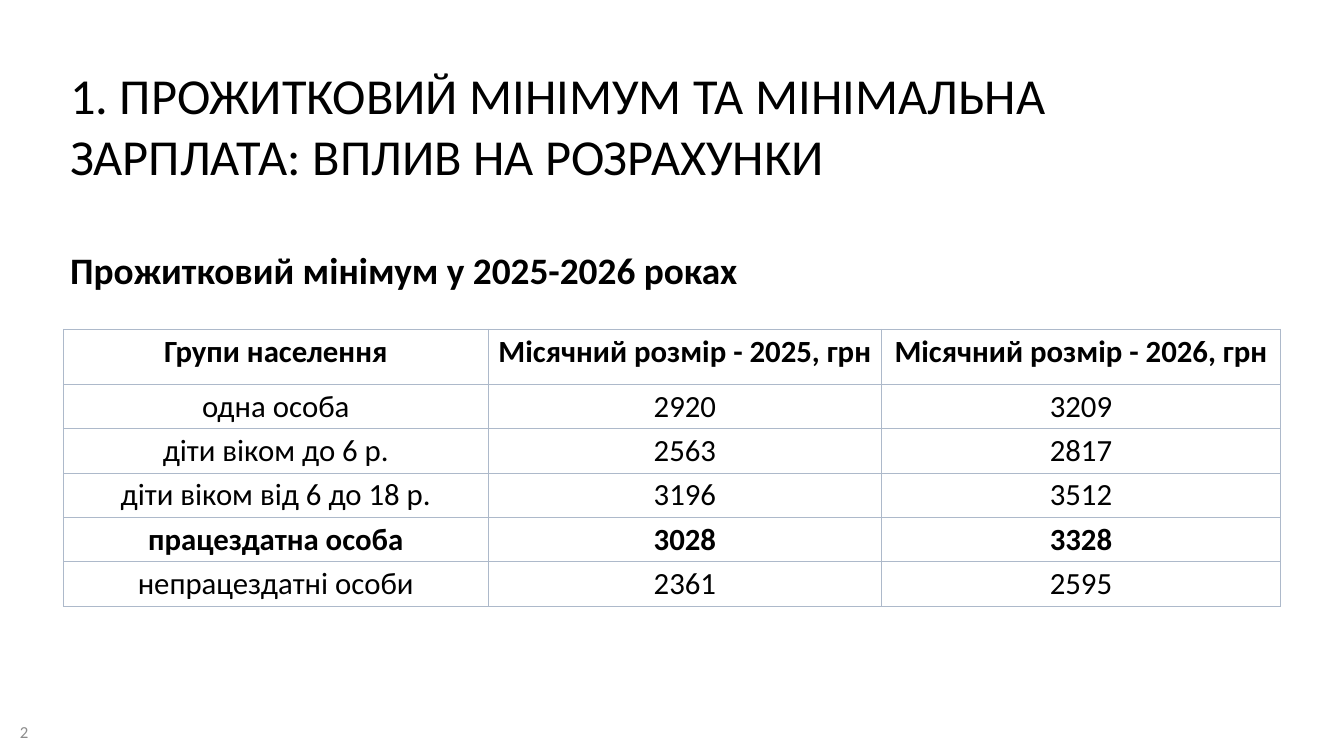
"""Builds a slide with a table of the subsistence minimum for 2025 and 2026."""
from lxml.etree import SubElement
from pptx import Presentation
from pptx.dml.color import RGBColor
from pptx.enum.text import MSO_ANCHOR, MSO_AUTO_SIZE, PP_ALIGN
from pptx.oxml.ns import qn
from pptx.util import Cm, Pt

COLOURS = {"text": "000000", "number": "8C8C8C", "cell": "FFFFFF", "border": "ADB9CA"}
COLUMN_WIDTHS = [16.05, 14.88, 15.06]
HEADER_HEIGHT, ROW_HEIGHT = 2.08, 1.65
BOLD_ROWS = {0, 4}
ROWS = [
    ["Групи населення", "Місячний розмір - 2025, грн", "Місячний розмір - 2026, грн"],
    ["одна особа", "2920", "3209"],
    ["діти віком до 6 р.", "2563", "2817"],
    ["діти віком від 6 до 18 р.", "3196", "3512"],
    ["працездатна особа", "3028", "3328"],
    ["непрацездатні особи", "2361", "2595"],
]


class SlideBuilder:
    def __init__(self, page, font_name="Calibri"):
        self.page = page
        self.font_name = font_name

    def add_text(self, frame, text, size, colour="text", bold=False, align=PP_ALIGN.LEFT):
        para = frame.paragraphs[0]
        for name, value in {"alignment": align, "space_before": Pt(0)}.items():
            setattr(para, name, value)
        span = para.add_run()
        span.text = text
        formats = {"name": self.font_name, "size": Pt(size), "bold": bold}
        for name, value in formats.items():
            setattr(span.font, name, value)
        span.font.color.rgb = RGBColor.from_string(COLOURS[colour])

    def place(self, box, left, top, width, height, anchor=MSO_ANCHOR.TOP):
        position = {"left": left, "top": top, "width": width, "height": height}
        for name, value in position.items():
            setattr(box, name, Cm(value))
        formats = {
            "word_wrap": True,
            "auto_size": MSO_AUTO_SIZE.NONE,
            "vertical_anchor": anchor,
        }
        for name, value in formats.items():
            setattr(box.text_frame, name, value)

    def title(self, text, *position):
        box = self.page.shapes.title
        self.place(box, *position)
        self.add_text(box.text_frame, text, 54)

    def body(self, text, *position):
        box = self.page.placeholders[1]
        self.place(box, *position)
        properties = box.text_frame.paragraphs[0]._p.get_or_add_pPr()
        for name in ("marL", "indent"):
            properties.set(name, "0")
        SubElement(properties, qn("a:buNone"))
        self.add_text(box.text_frame, text, 40, bold=True)

    def page_number(self, text, *position):
        box = self.page.shapes.add_textbox(0, 0, 0, 0)
        self.place(box, *position, anchor=MSO_ANCHOR.MIDDLE)
        self.add_text(box.text_frame, text, 18, "number")

    def border(self, cell):
        properties = cell._tc.get_or_add_tcPr()
        for index, side in enumerate(("lnL", "lnR", "lnT", "lnB")):
            line = properties.makeelement(qn(f"a:{side}"), {"w": str(Pt(1))})
            fill = SubElement(line, qn("a:solidFill"))
            SubElement(fill, qn("a:srgbClr"), val=COLOURS["border"])
            properties.insert(index, line)

    def table(self, rows, left, top):
        heights = [HEADER_HEIGHT] + [ROW_HEIGHT] * (len(rows) - 1)
        grid = self.page.shapes.add_table(
            len(rows), len(COLUMN_WIDTHS), Cm(left), Cm(top),
            Cm(sum(COLUMN_WIDTHS)), Cm(sum(heights)),
        ).table
        for column, width in zip(grid.columns, COLUMN_WIDTHS):
            column.width = Cm(width)
        for index, (row, height, texts) in enumerate(zip(grid.rows, heights, rows)):
            row.height = Cm(height)
            for cell, text in zip(row.cells, texts):
                cell.fill.solid()
                cell.fill.fore_color.rgb = RGBColor.from_string(COLOURS["cell"])
                self.border(cell)
                self.add_text(cell.text_frame, text, 33, bold=index in BOLD_ROWS,
                              align=PP_ALIGN.CENTER)


def main():
    deck = Presentation()
    deck.slide_width, deck.slide_height = Cm(50.8), Cm(28.58)
    builder = SlideBuilder(deck.slides.add_slide(deck.slide_layouts[1]))
    builder.title("1. ПРОЖИТКОВИЙ МІНІМУМ ТА МІНІМАЛЬНА ЗАРПЛАТА: ВПЛИВ НА РОЗРАХУНКИ",
                  2.4, 2.3, 46, 4.88)
    builder.page_number("2", 0.5, 26.92, 2.18, 1.52)
    builder.body("Прожитковий мінімум у 2025-2026 роках", 2.4, 9.22, 46, 1.96)
    builder.table(ROWS, 2.4, 12.45)
    deck.save("out.pptx")


if __name__ == "__main__":
    main()
